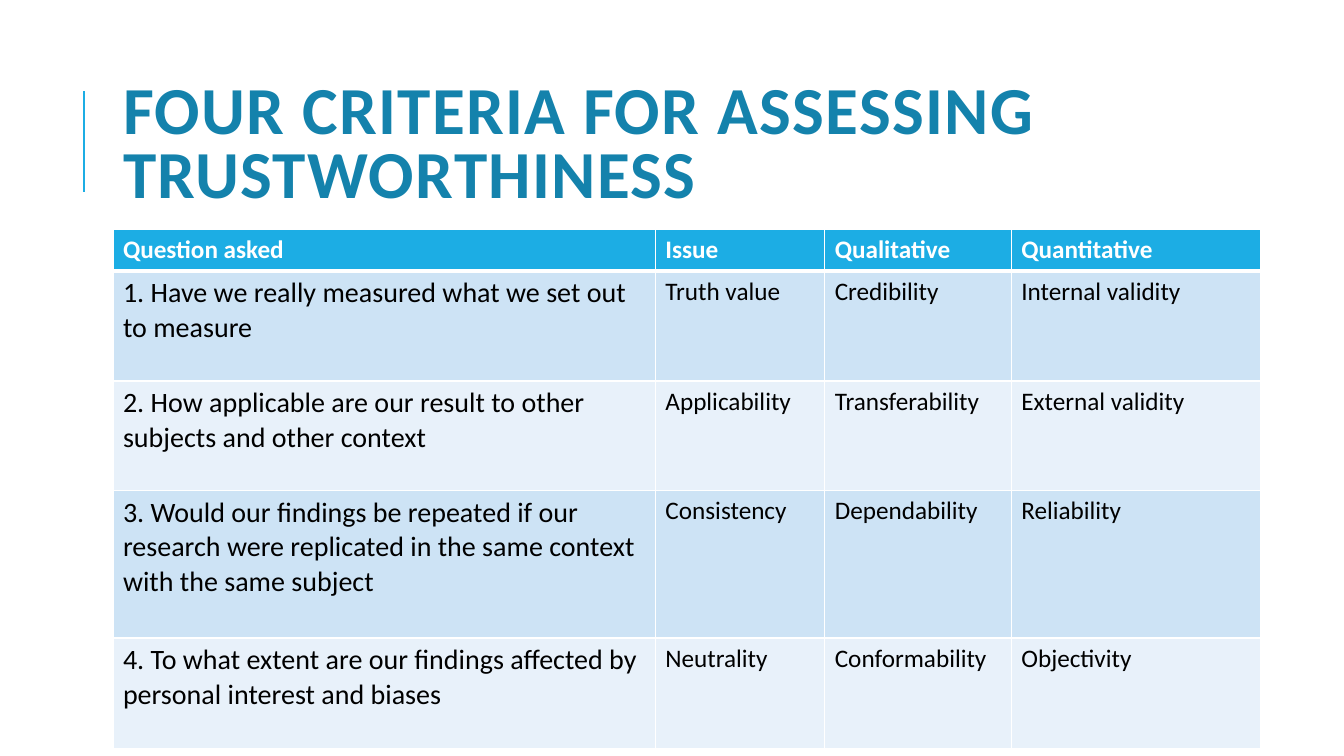
from lxml import etree
from pptx import Presentation
from pptx.dml.color import RGBColor
from pptx.enum.shapes import MSO_CONNECTOR
from pptx.enum.text import MSO_ANCHOR, MSO_AUTO_SIZE, PP_ALIGN
from pptx.oxml.ns import qn
from pptx.util import Inches, Pt

STRAIGHT = MSO_CONNECTOR.STRAIGHT
MIDDLE = MSO_ANCHOR.MIDDLE
LEFT = PP_ALIGN.LEFT
NO_FIT = MSO_AUTO_SIZE.NONE

FONT = "Calibri"
COLOURS = {
    "title": "1482AC",
    "accent": "1CADE4",
    "odd_row": "CDE3F5",
    "even_row": "E8F1FA",
    "white": "FFFFFF",
    "black": "000000",
}
SLIDE_WIDTH, SLIDE_HEIGHT = 13.33, 7.5
CONTENT_LEFT, TABLE_TOP = 1.12, 2.28
COLUMN_WIDTHS = [5.38, 1.68, 1.85, 2.47]
ROW_HEIGHTS = [0.41, 1.09, 1.09, 1.46, 1.1]
CRITERIA = [
    ["Question asked", "Issue", "Qualitative", "Quantitative"],
    ["1. Have we really measured what we set out to measure",
     "Truth value", "Credibility", "Internal validity"],
    ["2. How applicable are our result to other subjects and other context",
     "Applicability", "Transferability", "External validity"],
    ["3. Would our findings be repeated if our research were replicated "
     "in the same context with the same subject",
     "Consistency", "Dependability", "Reliability"],
    ["4. To what extent are our findings affected by personal interest and biases",
     "Neutrality", "Conformability", "Objectivity"],
]


def colour(name):
    return RGBColor.from_string(COLOURS[name])


def add_text(paragraph, wording, size, colour_name, bold):
    run = paragraph.add_run()
    run.text = wording
    run.font.name = FONT
    run.font.size = Pt(size)
    run.font.bold = bold
    run.font.color.rgb = colour(colour_name)
    return run


def set_title(slide, wording):
    title = slide.shapes.title
    title.left, title.top = Inches(CONTENT_LEFT), Inches(0.64)
    title.width, title.height = Inches(10.63), Inches(1.64)
    frame = title.text_frame
    frame.word_wrap = True
    frame.auto_size = NO_FIT
    frame.vertical_anchor = MIDDLE
    heading = frame.paragraphs[0]
    heading.alignment = LEFT
    heading.line_spacing = 0.8
    run = add_text(heading, wording, 48, "title", True)
    run.font._element.set("spc", "100")


def add_title_rule(slide):
    rule = slide.shapes.add_connector(
        STRAIGHT, Inches(0.83), Inches(1.9), Inches(0.83), Inches(0.9))
    rule.line.color.rgb = colour("accent")
    rule.line.width = Pt(1.5)
    etree.SubElement(rule._element.spPr, qn("a:effectLst"))


def set_borders(cell, bottom_width):
    properties = cell._tc.get_or_add_tcPr()
    widths = {"lnL": 1, "lnR": 1, "lnT": 1, "lnB": bottom_width}
    for position, (side, width) in enumerate(widths.items()):
        border = etree.Element(qn(f"a:{side}"), w=str(Pt(width)))
        fill = etree.SubElement(border, qn("a:solidFill"))
        etree.SubElement(fill, qn("a:srgbClr"), val=COLOURS["white"])
        properties.insert(position, border)


def fill_cell(cell, wording, row, column):
    header = row == 0
    fill_name = "accent" if header else "odd_row" if row % 2 else "even_row"
    cell.fill.solid()
    cell.fill.fore_color.rgb = colour(fill_name)
    size = 20 if column == 0 and not header else 18
    add_text(cell.text_frame.paragraphs[0], wording, size,
             "white" if header else "black", header)
    set_borders(cell, 3 if header else 1)
    if row == 1:
        cell._tc.tcPr.find(qn("a:lnT")).set("w", str(Pt(3)))


def add_criteria_table(slide):
    criteria = slide.shapes.add_table(
        len(ROW_HEIGHTS), len(COLUMN_WIDTHS), Inches(CONTENT_LEFT), Inches(TABLE_TOP),
        Inches(sum(COLUMN_WIDTHS)), Inches(sum(ROW_HEIGHTS))).table
    for column, width in zip(criteria.columns, COLUMN_WIDTHS):
        column.width = Inches(width)
    for row, height in zip(criteria.rows, ROW_HEIGHTS):
        row.height = Inches(height)
    for row, wordings in enumerate(CRITERIA):
        for column, wording in enumerate(wordings):
            fill_cell(criteria.cell(row, column), wording, row, column)


def main():
    deck = Presentation()
    deck.slide_width, deck.slide_height = Inches(SLIDE_WIDTH), Inches(SLIDE_HEIGHT)
    slide = deck.slides.add_slide(deck.slide_layouts.get_by_name("Title Only"))
    add_title_rule(slide)
    set_title(slide, "FOUR CRITERIA FOR ASSESSING TRUSTWORTHINESS")
    add_criteria_table(slide)
    deck.save("out.pptx")


if __name__ == "__main__":
    main()
